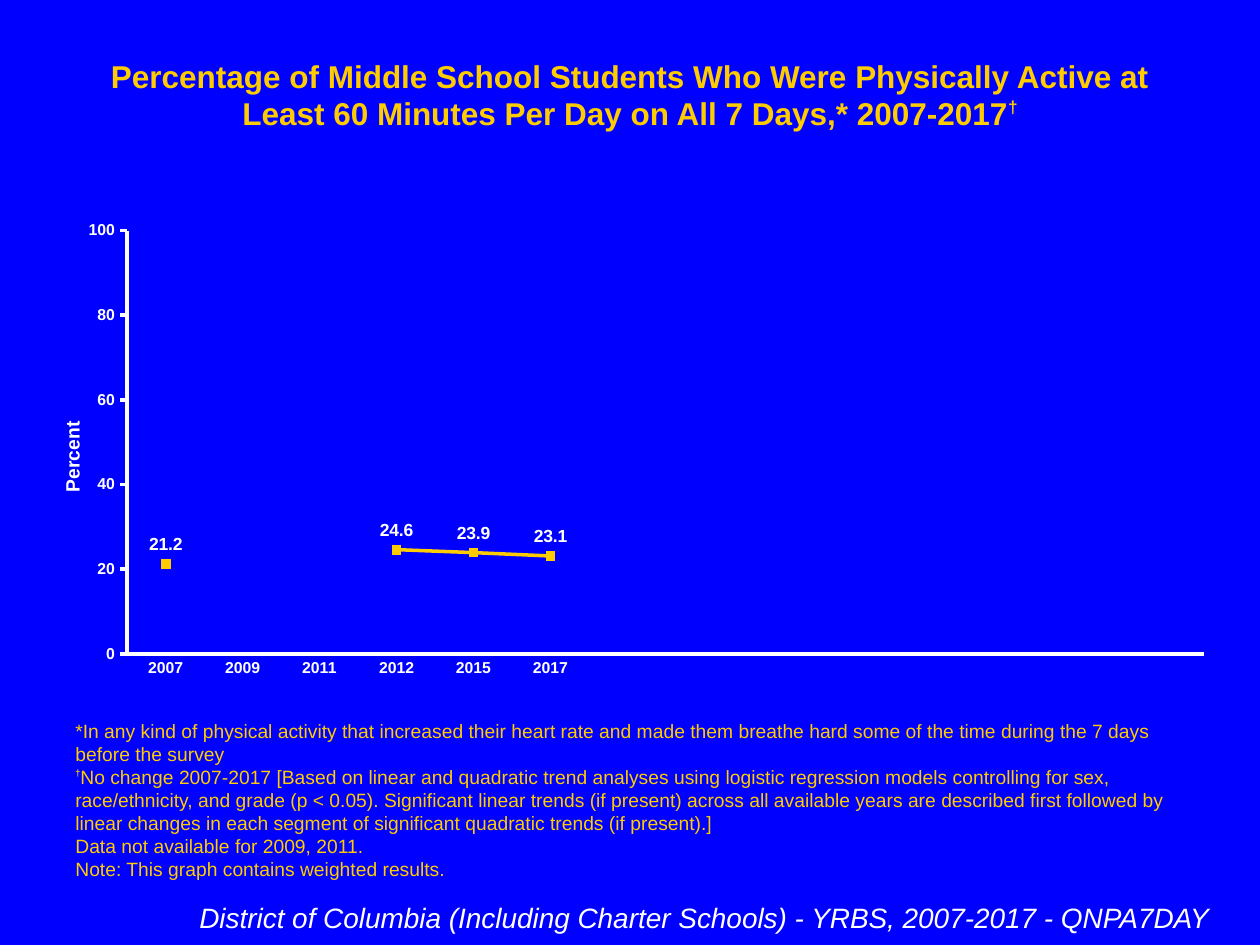
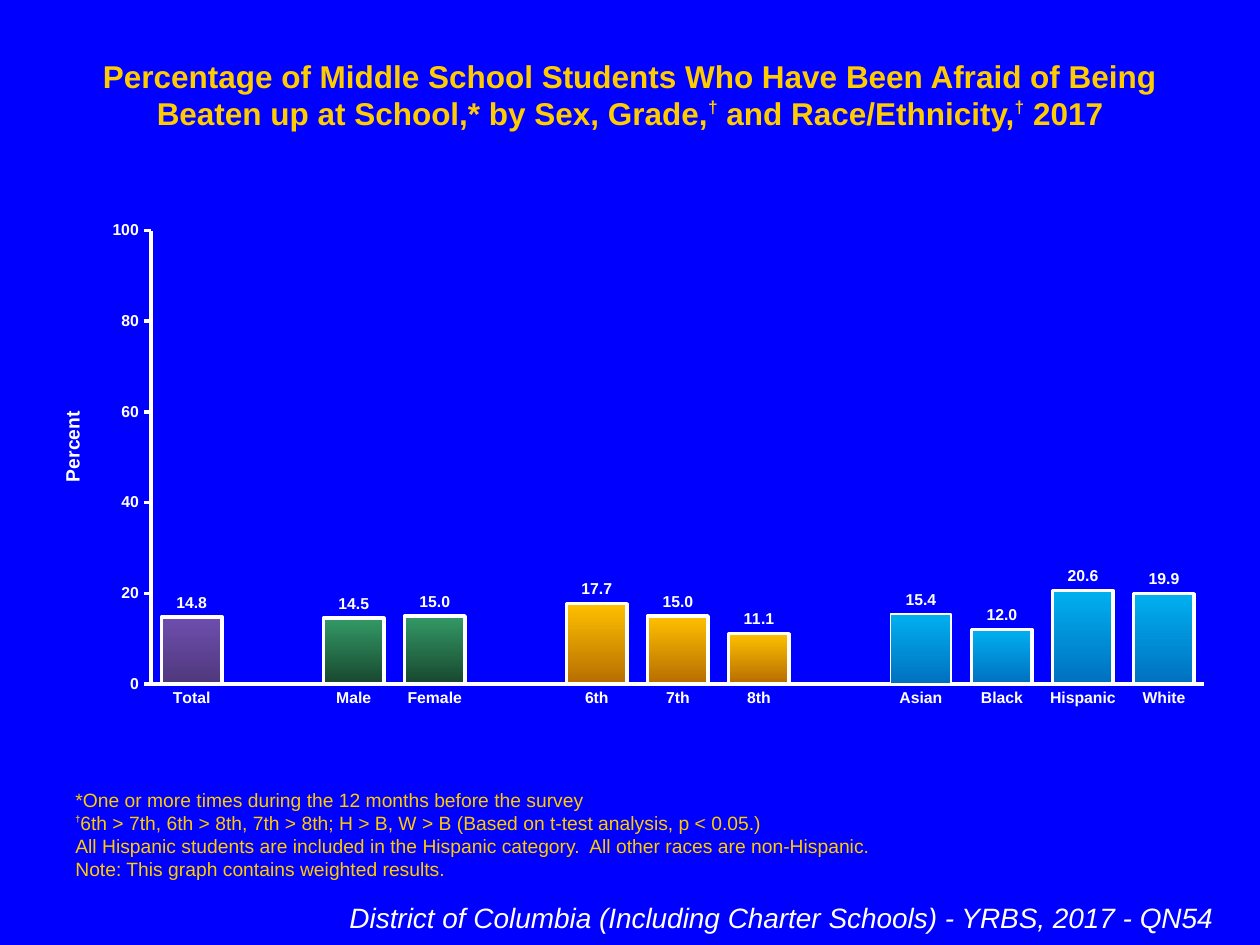
"""Two survey slides: a trend line by year and a column chart by student group."""
from lxml import etree
from pptx import Presentation
from pptx.chart.data import CategoryChartData
from pptx.dml.color import RGBColor
from pptx.enum.chart import XL_CHART_TYPE as Kind, XL_LABEL_POSITION as LabelSpot
from pptx.enum.chart import XL_MARKER_STYLE as Marker, XL_TICK_MARK as Tick
from pptx.enum.text import MSO_ANCHOR as Anchor, MSO_AUTO_SIZE as AutoSize, PP_ALIGN as Align
from pptx.oxml.ns import qn
from pptx.util import Inches, Pt

FONT = "Arial"
COLORS = {"ground": "0000FF", "gold": "FFCC00", "white": "FFFFFF", "bar": "26CA59"}
COLORS = {name: RGBColor.from_string(value) for name, value in COLORS.items()}
GRADIENTS = {
    "total": ("6E4EAE", "4F387C"),
    "sex": ("339966", "18472F"),
    "grade": ("FFC000", "B66D00"),
    "race": ("00B0F0", "0070C0"),
}
BAR_GROUPS = {0: "total", 2: "sex", 3: "sex", 5: "grade", 6: "grade", 7: "grade",
              9: "race", 10: "race", 11: "race", 12: "race"}
ASIAN = 9

PAGES = [
    {
        "title": "Percentage of Middle School Students Who Were Physically Active at "
                 "Least 60 Minutes Per Day on All 7 Days,* 2007-2017†",
        "notes": [
            "*In any kind of physical activity that increased their heart rate and made them "
            "breathe hard some of the time during the 7 days before the survey",
            "†No change 2007-2017 [Based on linear and quadratic trend analyses using logistic "
            "regression models controlling for sex, race/ethnicity, and grade (p < 0.05). "
            "Significant linear trends (if present) across all available years are described "
            "first followed by linear changes in each segment of significant quadratic trends "
            "(if present).]",
            "Data not available for 2009, 2011.",
            "Note: This graph contains weighted results.",
        ],
        "footer": "District of Columbia (Including Charter Schools) - YRBS, 2007-2017 - QNPA7DAY",
        "footer_span": (0.25, 9.45),
        "kind": Kind.LINE_MARKERS,
        "categories": ["2007", "2009", "2011", "2012", "2015", "2017"] + [""] * 8,
        "values": [21.2, None, None, 24.6, 23.9, 23.1] + [None] * 8,
        "plot": (0.08, 0.04, 0.9, 0.84),
        "percent": (0.02, 0.41),
        "label_size": 10,
        "label_spot": LabelSpot.ABOVE,
    },
    {
        "title": "Percentage of Middle School Students Who Have Been Afraid of Being Beaten up "
                 "at School,* by Sex, Grade,† and Race/Ethnicity,† 2017",
        "notes": [
            "*One or more times during the 12 months before the survey",
            "†6th > 7th, 6th > 8th, 7th > 8th; H > B, W > B (Based on t-test analysis, p < 0.05.)",
            "All Hispanic students are included in the Hispanic category.  "
            "All other races are non-Hispanic.",
            "Note: This graph contains weighted results.",
        ],
        "footer": "District of Columbia (Including Charter Schools) - YRBS, 2017 - QN54",
        "footer_span": (0.33, 9.4),
        "kind": Kind.COLUMN_CLUSTERED,
        "categories": ["Total", "", "Male", "Female", "", "6th", "7th", "8th", "",
                       "Asian", "Black", "Hispanic", "White"],
        "values": [14.8, None, 14.5, 15, None, 17.7, 15, 11.1, None, 15.4, 12, 20.6, 19.9],
        "plot": (0.1, 0.04, 0.88, 0.9),
        "percent": (0.02, 0.39),
        "label_size": 9,
        "label_spot": LabelSpot.OUTSIDE_END,
    },
]


def write(slide, paragraphs, place, size, color, align=Align.LEFT, anchor=Anchor.TOP,
          bold=False, italic=False, dagger_size=9, dagger_rise=50):
    frame = slide.shapes.add_textbox(*map(Inches, place)).text_frame
    frame.word_wrap = True
    frame.auto_size = AutoSize.SHAPE_TO_FIT_TEXT
    frame.vertical_anchor = anchor
    for number, text in enumerate(paragraphs):
        line = frame.paragraphs[0] if number == 0 else frame.add_paragraph()
        line.alignment = align
        for piece in text.replace("†", "|†|").split("|"):
            if not piece:
                continue
            run = line.add_run()
            run.text = piece
            dagger = piece == "†"
            run.font.name, run.font.color.rgb = FONT, COLORS[color]
            run.font.size = Pt(dagger_size if dagger else size)
            run.font.bold, run.font.italic = bold or dagger, italic
            if dagger:
                run.font._element.set("baseline", str(dagger_rise * 1000))


def set_layout(parent, after, numbers, inner=False):
    for old in parent.findall(qn("c:layout")):
        parent.remove(old)
    layout = etree.Element(qn("c:layout"))
    manual = etree.SubElement(layout, qn("c:manualLayout"))
    settings = [("layoutTarget", "inner")] if inner else []
    settings += [("xMode", "edge"), ("yMode", "edge")] + list(zip("xywh", numbers))
    for tag, value in settings:
        etree.SubElement(manual, qn(f"c:{tag}")).set("val", str(value))
    if after is None:
        parent.insert(0, layout)
    else:
        after.addnext(layout)


deck = Presentation()
deck.slide_width, deck.slide_height = Inches(10), Inches(7.5)

for page in PAGES:
    slide = deck.slides.add_slide(deck.slide_layouts[6])
    slide.background.fill.solid()
    slide.background.fill.fore_color.rgb = COLORS["ground"]

    write(slide, [page["title"]], (0.5, 0.4, 9, 0.4), 18, "gold", align=Align.CENTER,
          bold=True, dagger_size=17, dagger_rise=40)
    write(slide, page["notes"], (0.5, 6.75, 9, 0.29), 11, "gold", anchor=Anchor.BOTTOM)
    left, width = page["footer_span"]
    write(slide, [page["footer"]], (left, 7.1, width, 0.37), 16, "white",
          align=Align.RIGHT, italic=True)

    survey = CategoryChartData()
    survey.categories = page["categories"]
    survey.add_series("Series 1", page["values"])
    chart = slide.shapes.add_chart(page["kind"], Inches(0.25), Inches(1.67), Inches(9.5),
                                   Inches(4), survey).chart
    chart.has_title = chart.has_legend = False
    chart.font.name, chart.font.size = FONT, Pt(18)
    chart.font.color.rgb = COLORS["white"]
    set_layout(chart._chartSpace.chart.plotArea, None, page["plot"], inner=True)

    years_or_groups, percent = chart.category_axis, chart.value_axis
    for axis, tick in ((years_or_groups, Tick.NONE), (percent, Tick.OUTSIDE)):
        axis.has_major_gridlines = False
        axis.major_tick_mark, axis.minor_tick_mark = tick, Tick.NONE
        axis.format.line.color.rgb = COLORS["white"]
        axis.format.line.width = Pt(2)
        ticks = axis.tick_labels.font
        ticks.name, ticks.size, ticks.bold = FONT, Pt(9), True
        ticks.color.rgb = COLORS["white"]
    percent.minimum_scale, percent.maximum_scale, percent.major_unit = 0, 100, 20
    percent.tick_labels.number_format = "#,##0"
    percent.tick_labels.number_format_is_linked = False
    percent.axis_title.text_frame.text = "Percent"
    caption = percent.axis_title.text_frame.paragraphs[0].runs[0].font
    caption.name, caption.size, caption.bold = FONT, Pt(11), True
    caption.color.rgb = COLORS["white"]
    title_xml = percent.axis_title._element
    set_layout(title_xml, title_xml.find(qn("c:tx")), page["percent"])

    plot = chart.plots[0]
    plot.vary_by_categories = False
    plot.has_data_labels = True
    labels = plot.data_labels
    labels.show_value, labels.position = True, page["label_spot"]
    labels.number_format, labels.number_format_is_linked = "#,##0.0", False
    labels.font.name, labels.font.size, labels.font.bold = FONT, Pt(page["label_size"]), True
    labels.font.color.rgb = COLORS["white"]

    series = plot.series[0]
    if page["kind"] == Kind.LINE_MARKERS:
        series.smooth = False
        series.format.line.color.rgb = COLORS["gold"]
        series.format.line.width = Pt(2)
        series.marker.style, series.marker.size = Marker.SQUARE, 5
        series.marker.format.fill.solid()
        series.marker.format.fill.fore_color.rgb = COLORS["gold"]
        series.marker.format.line.color.rgb = COLORS["gold"]
    else:
        plot.gap_width, plot.overlap = 34, 100
        series.format.fill.solid()
        series.format.fill.fore_color.rgb = COLORS["bar"]
        for index, group in BAR_GROUPS.items():
            bar = series.points[index].format
            bar.fill.gradient()
            bar.fill.gradient_angle = 270
            for stop, shade in zip(bar.fill.gradient_stops, GRADIENTS[group]):
                stop.color.rgb = RGBColor.from_string(shade)
            bar.line.color.rgb = COLORS["white"]
            bar.line.width = Pt(1 if index == ASIAN else 2)

deck.save("out.pptx")
